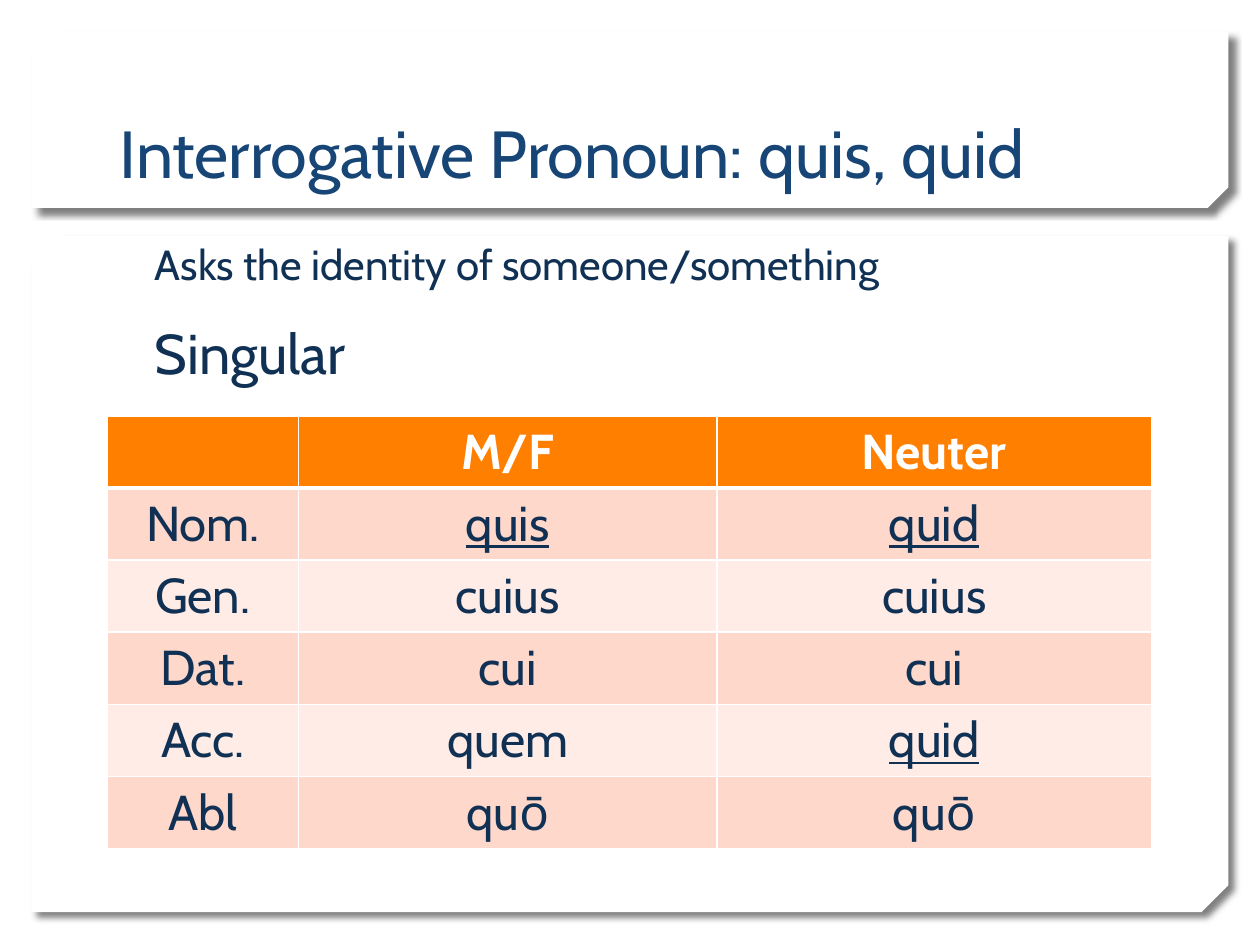
import pptx
import pptx.util
import pptx.dml.color
import pptx.enum.shapes
import pptx.enum.text
import pptx.oxml
import pptx.oxml.ns
from dataclasses import dataclass
from lxml import etree

# Content
TITLE = "Interrogative Pronoun: quis, quid"
PURPOSE = "Asks the identity of someone/something"
NUMBER = "Singular"
DECLENSION = [
    ("", "M/F", "Neuter"),
    ("Nom.", "quis", "quid"),
    ("Gen.", "cuius", "cuius"),
    ("Dat.", "cui", "cui"),
    ("Acc.", "quem", "quid"),
    ("Abl", "quō", "quō"),
]
UNDERLINED = {(1, 1), (1, 2), (4, 2)}


@dataclass(frozen=True)
class Theme:
    font: str = "Cabin"
    title: str = "174576"
    text: str = "103154"
    white: str = "FFFFFF"
    header: str = "FF7F01"
    bands: tuple = ("FFD8CC", "FFECE7")
    title_size: int = 38
    number_size: int = 32
    table_size: int = 28
    purpose_size: int = 24


# Layout, in inches
WIDTH, HEIGHT = 10, 7.5
MARGIN = WIDTH / 40
PANEL_WIDTH = WIDTH - 2 * MARGIN
PANELS = [(MARGIN, 1.4, 0.117), (1.87, 5.37, 0.04)]  # top, height, snip
LEFT, CONTENT_WIDTH = 0.85, 8.29
TEXT_LEFT = 1.13
TABLE_TOP, ROW_HEIGHT = 3.3, 0.57
COLUMNS = (1.52, 3.32, 3.45)

theme = Theme()
inch = pptx.util.Inches
qn = pptx.oxml.ns.qn


def rgb(value):
    return pptx.dml.color.RGBColor.from_string(value)


def write(frame, text, size, color, bold=False, underline=False, align="LEFT"):
    paragraph = frame.paragraphs[0]
    paragraph.text = text
    paragraph.alignment = getattr(pptx.enum.text.PP_ALIGN, align)
    font = paragraph.font
    font.name, font.size, font.color.rgb = theme.font, pptx.util.Pt(size), rgb(color)
    font.bold = bold
    for run in paragraph.runs:
        run.font.underline = underline


def add_panel(slide, top, height, snip):
    panel = slide.shapes.add_shape(
        pptx.enum.shapes.MSO_SHAPE.SNIP_2_DIAG_RECTANGLE,
        inch(MARGIN), inch(top), inch(PANEL_WIDTH), inch(height))
    panel.adjustments[0], panel.adjustments[1] = 0, snip
    panel.fill.solid()
    panel.fill.fore_color.rgb = rgb(theme.white)
    panel.line.fill.background()
    panel.shadow.inherit = False
    properties = panel._element.spPr
    properties.find(qn("a:xfrm")).set("flipV", "1")
    shadow = etree.SubElement(
        properties.find(qn("a:effectLst")), qn("a:outerShdw"),
        blurRad=str(pptx.util.Pt(4)), dist=str(pptx.util.Pt(5)),
        dir=str(45 * 60000), algn="tl", rotWithShape="0")
    black = etree.SubElement(shadow, qn("a:srgbClr"), val="000000")
    etree.SubElement(black, qn("a:alpha"), val="50000")
    # Panels lie behind the title
    slide.shapes._spTree.insert(2, panel._element)


def add_caption(slide, text, top, width, height, size):
    box = slide.shapes.add_textbox(
        inch(TEXT_LEFT), inch(top), inch(width), inch(height))
    box.text_frame.word_wrap = True
    write(box.text_frame, text, size, theme.text)


def set_borders(cell, bottom):
    properties = cell._tc.get_or_add_tcPr()
    for side, points in (("L", 1), ("R", 1), ("T", 1), ("B", bottom)):
        line = etree.SubElement(
            properties, qn(f"a:ln{side}"), w=str(pptx.util.Pt(points)))
        fill = etree.SubElement(line, qn("a:solidFill"))
        etree.SubElement(fill, qn("a:srgbClr"), val=theme.white)


def add_declension(slide):
    table = slide.shapes.add_table(
        len(DECLENSION), len(COLUMNS), inch(LEFT), inch(TABLE_TOP),
        inch(CONTENT_WIDTH), inch(ROW_HEIGHT * len(DECLENSION))).table
    for column, width in zip(table.columns, COLUMNS):
        column.width = inch(width)
    for r, forms in enumerate(DECLENSION):
        is_header = r == 0
        for c, form in enumerate(forms):
            cell = table.cell(r, c)
            # The header's thick rule is shared with the row below it
            set_borders(cell, 3 if is_header else 1)
            if r == 1:
                cell._tc.tcPr.find(qn("a:lnT")).set("w", str(pptx.util.Pt(3)))
            cell.fill.solid()
            cell.fill.fore_color.rgb = rgb(
                theme.header if is_header else theme.bands[(r - 1) % 2])
            write(cell.text_frame, form, theme.table_size,
                  theme.white if is_header else theme.text,
                  bold=is_header, underline=(r, c) in UNDERLINED, align="CENTER")


def main():
    deck = pptx.Presentation()
    deck.slide_width, deck.slide_height = inch(WIDTH), inch(HEIGHT)
    slide = deck.slides.add_slide(deck.slide_layouts[5])

    # Background panels
    for panel in PANELS:
        add_panel(slide, *panel)

    # Title
    title = slide.shapes.title
    title.left, title.top = inch(LEFT), inch(0.32)
    title.width, title.height = inch(CONTENT_WIDTH), inch(1.25)
    title.text_frame.vertical_anchor = pptx.enum.text.MSO_ANCHOR.BOTTOM
    write(title.text_frame, TITLE, theme.title_size, theme.title)

    # Table and captions
    add_declension(slide)
    add_caption(slide, PURPOSE, 1.84, 6.75, 0.5, theme.purpose_size)
    add_caption(slide, NUMBER, 2.48, 3.02, 0.64, theme.number_size)

    deck.save("out.pptx")


if __name__ == "__main__":
    main()
